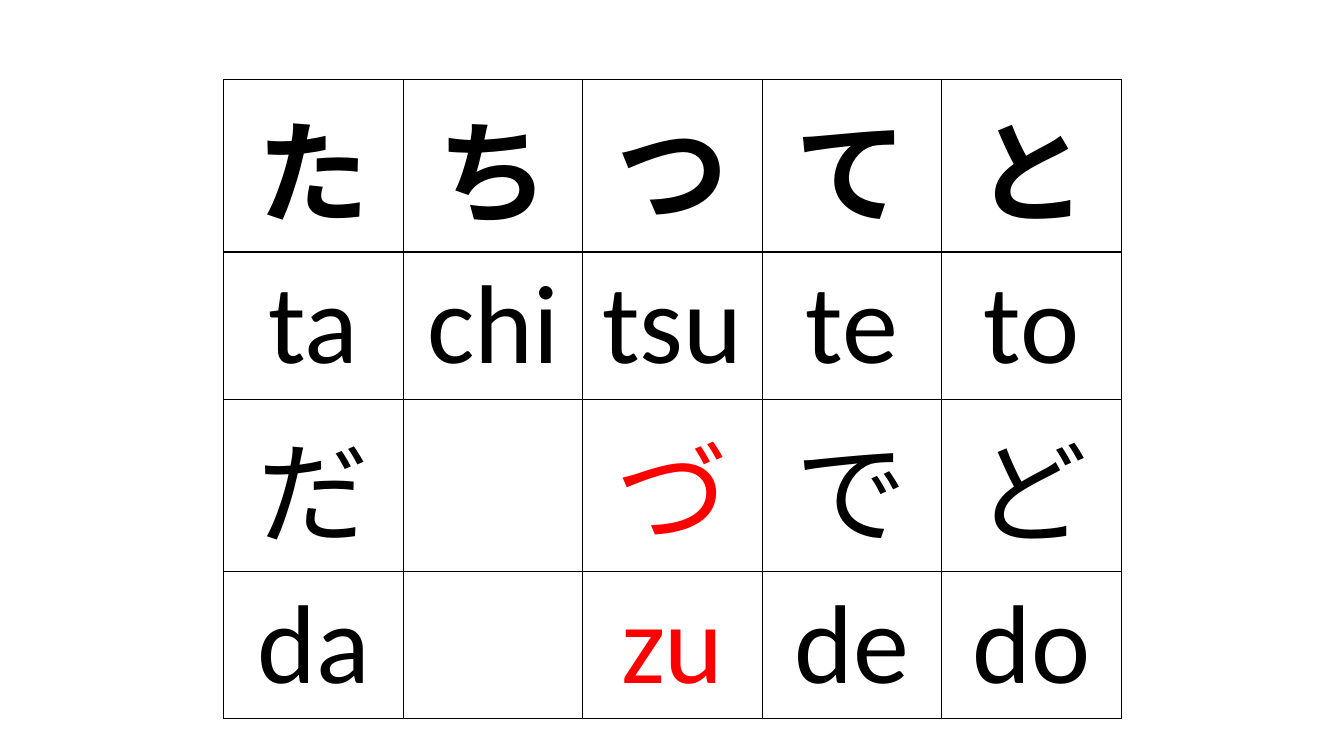
"""Build the hiragana chart of the ta and da rows with their readings."""
from lxml import etree
from pptx import Presentation
from pptx import util as u
from pptx.dml.color import RGBColor
from pptx.enum import text
from pptx.oxml import ns

THEME = {
    "paper": RGBColor.from_string("FFFFFF"),
    "ink": RGBColor.from_string("000000"),
    "accent": RGBColor.from_string("FF0000"),
    "font": "Calibri",
    "size": u.Pt(80),
    "border": u.Pt(1),
}
KANA_ROWS = [
    ["た", "ち", "つ", "て", "と"],
    ["ta", "chi", "tsu", "te", "to"],
    ["だ", "", "づ", "で", "ど"],
    ["da", "", "zu", "de", "do"],
]
IRREGULAR = {"づ", "zu"}
COLUMN_WIDTH = 1.78
ROW_HEIGHTS = [1.71, 1.46, 1.71, 1.46]


def add_borders(cell):
    """Draw a thin line on each side of a cell."""
    properties = cell._tc.get_or_add_tcPr()
    for side in ("lnL", "lnR", "lnT", "lnB"):
        line = etree.SubElement(properties, ns.qn(f"a:{side}"), w=str(THEME["border"]))
        fill = etree.SubElement(line, ns.qn("a:solidFill"))
        etree.SubElement(fill, ns.qn("a:srgbClr"), val=str(THEME["ink"]))


presentation = Presentation()
presentation.slide_width = u.Inches(13.33)
presentation.slide_height = u.Inches(7.5)
slide = presentation.slides.add_slide(presentation.slide_layouts[6])

table = slide.shapes.add_table(
    len(KANA_ROWS), len(KANA_ROWS[0]), u.Inches(2.22), u.Inches(0.79),
    u.Inches(COLUMN_WIDTH * len(KANA_ROWS[0])), u.Inches(sum(ROW_HEIGHTS)),
).table
table.horz_banding = False
for column in table.columns:
    column.width = u.Inches(COLUMN_WIDTH)

for row_index, syllables in enumerate(KANA_ROWS):
    table.rows[row_index].height = u.Inches(ROW_HEIGHTS[row_index])
    for column_index, syllable in enumerate(syllables):
        cell = table.cell(row_index, column_index)
        add_borders(cell)
        cell.fill.solid()
        cell.fill.fore_color.rgb = THEME["paper"]
        if not syllable:
            continue
        paragraph = cell.text_frame.paragraphs[0]
        paragraph.alignment = text.PP_ALIGN.CENTER
        run = paragraph.add_run()
        run.text = syllable
        font_format = {"name": THEME["font"], "size": THEME["size"], "bold": row_index == 0}
        for attribute, value in font_format.items():
            setattr(run.font, attribute, value)
        run.font.color.rgb = THEME["accent" if syllable in IRREGULAR else "ink"]

presentation.save("out.pptx")
